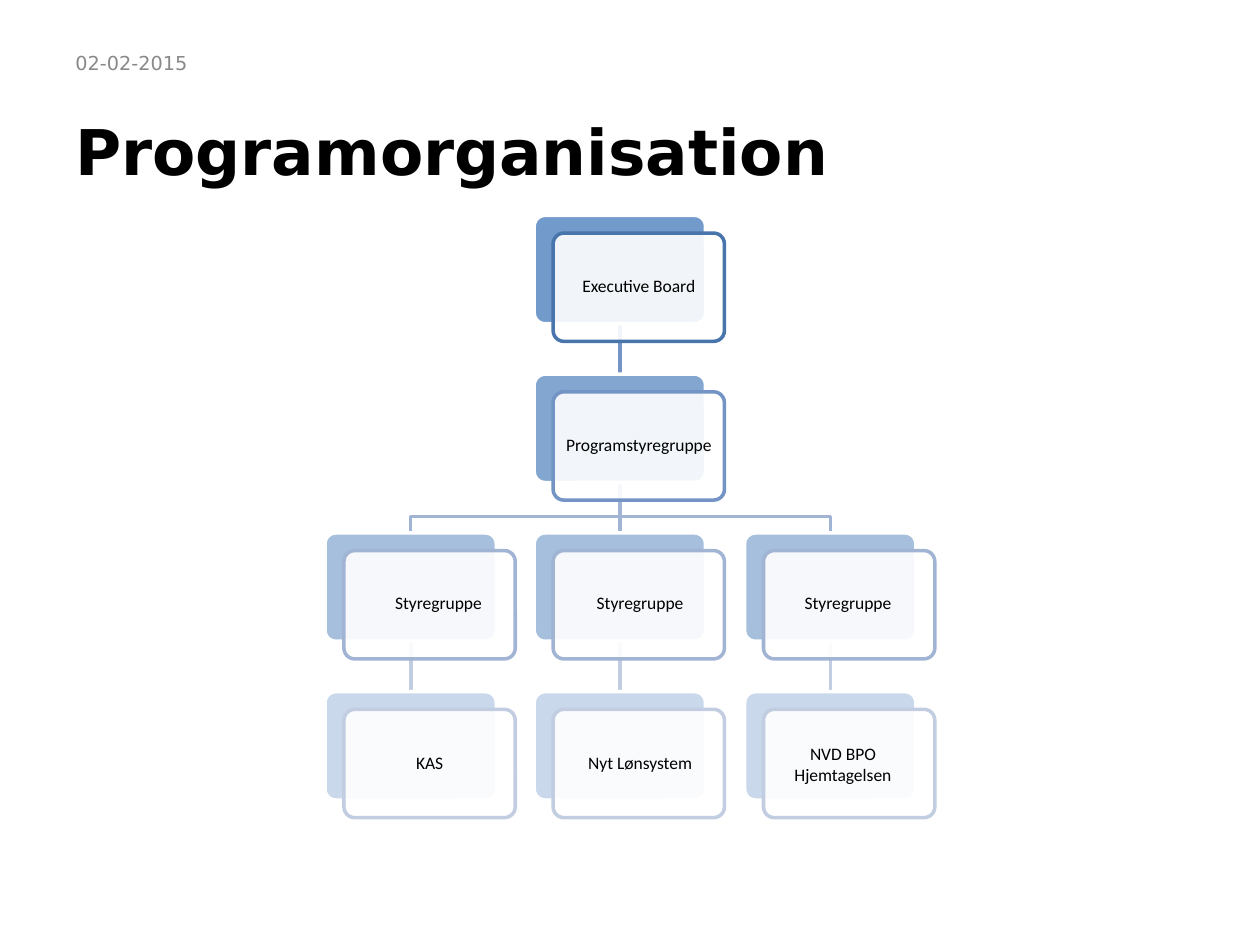
from dataclasses import dataclass

from lxml.etree import SubElement as Sub
from pptx import Presentation
from pptx.dml.color import RGBColor
from pptx.enum.shapes import MSO_CONNECTOR as Link, MSO_SHAPE as Kind
from pptx.enum.text import MSO_ANCHOR as Anchor, PP_ALIGN as Align
from pptx.oxml.ns import qn
from pptx.util import Inches, Pt

COLS = (2.58, 4.24, 5.91)
TOP, STEP = 1.71, 1.26
WIDE, HIGH = 1.36, 0.86
DX, DY = 0.15, 0.14  # shift of the front card
GAP, BEND = 0.4, 0.27  # link height, and where it turns


@dataclass
class Level:
    edge: str
    alpha: int
    cols: tuple[int, ...]


@dataclass
class Label:
    text: str
    x: float
    y: float
    w: float
    h: float
    size: float = 10
    font: str = "Calibri"
    color: str = "000000"
    bold: bool = False
    align: Align = Align.CENTER
    anchor: Anchor = Anchor.TOP
    pad: float | None = None
    lead: float | None = None


LEVELS = [
    Level("4875AC", 80, (1,)),
    Level("7394C5", 70, (1,)),
    Level("A1B4D4", 50, (0, 1, 2)),
    Level("C2CDE1", 30, (0, 1, 2)),
]


def row_top(row: int) -> float:
    return TOP + row * STEP


def inner(text: str, col: int, row: int) -> Label:
    """Label that fills the front card."""
    return Label(text, COLS[col] + DX, row_top(row) + DY, WIDE, HIGH,
                 anchor=Anchor.MIDDLE, pad=0.04, lead=0.9)


LABELS = [
    Label("Programorganisation", 0.5, 0.84, 8.75, 1, 36, "DejaVu Sans",
          bold=True, align=Align.LEFT),
    Label("02-02-2015", 0.5, 0.3, 2.33, 0.4, 11, "DejaVu Sans", "898989",
          align=Align.LEFT, anchor=Anchor.MIDDLE),
    inner("Executive Board", 1, 0),
    inner("Programstyregruppe", 1, 1),
    inner("KAS", 0, 3),
    Label("Nyt Lønsystem", 4.45, 5.92, 1.26, 0.27),
    Label("NVD BPO Hjemtagelsen", 6.02, 5.85, 1.34, 0.44),
    Label("Styregruppe", 2.83, 4.65, 1.3, 0.27),
    Label("Styregruppe", 4.45, 4.65, 1.26, 0.27),
    Label("Styregruppe", 6.1, 4.65, 1.26, 0.27),
]


def rgb(code: str) -> RGBColor:
    return RGBColor.from_string(code)


def stroke(item, color: str) -> None:
    item.line.color.rgb = rgb(color)
    item.line.width = Pt(2)


def add_link(slide, start: int, end: int, row: int, color: str) -> None:
    """Join the card above to the one at this row."""
    x1, x2 = (COLS[c] + WIDE / 2 for c in (start, end))
    y = row_top(row) - GAP
    if start == end:
        line = slide.shapes.add_connector(
            Link.STRAIGHT, Inches(x1), Inches(y), Inches(x2), Inches(y + GAP))
        Sub(line._element.spPr, qn("a:effectLst"))
    else:
        pen = slide.shapes.build_freeform(Inches(x1), Inches(y))
        turns = [(x1, y + BEND), (x2, y + BEND), (x2, y + GAP)]
        pen.add_line_segments([(Inches(a), Inches(b)) for a, b in turns],
                              close=False)
        line = pen.convert_to_shape()
        line.fill.background()
        line.shadow.inherit = False
    stroke(line, color)


def add_panel(slide, x: float, y: float, fill: str, alpha: int,
              edge: str) -> None:
    box = slide.shapes.add_shape(Kind.ROUNDED_RECTANGLE, Inches(x), Inches(y),
                                 Inches(WIDE), Inches(HIGH))
    box.adjustments[0] = 0.1
    box.shadow.inherit = False
    box.fill.solid()
    box.fill.fore_color.rgb = rgb(fill)
    tint = box._element.spPr.find(qn("a:solidFill"))[0]
    Sub(tint, qn("a:alpha")).set("val", str(alpha * 1000))
    stroke(box, edge)


def add_card(slide, col: int, row: int, level: Level) -> None:
    x, y = COLS[col], row_top(row)
    add_panel(slide, x, y, "4F81BD", level.alpha, "FFFFFF")
    add_panel(slide, x + DX, y + DY, "FFFFFF", 90, level.edge)


def add_label(slide, label: Label) -> None:
    box = slide.shapes.add_textbox(Inches(label.x), Inches(label.y),
                                   Inches(label.w), Inches(label.h))
    frame = box.text_frame
    frame.word_wrap = True
    frame.vertical_anchor = label.anchor
    if label.pad is not None:
        frame.margin_left = frame.margin_right = Inches(label.pad)
        frame.margin_top = frame.margin_bottom = Inches(label.pad)
    para = frame.paragraphs[0]
    para.alignment = label.align
    if label.lead:
        para.line_spacing = label.lead
    run = para.add_run()
    run.text = label.text
    run.font.name = label.font
    run.font.size = Pt(label.size)
    run.font.bold = label.bold
    run.font.color.rgb = rgb(label.color)


def main() -> None:
    deck = Presentation()
    deck.slide_width, deck.slide_height = Inches(10), Inches(7.5)
    slide = deck.slides.add_slide(deck.slide_layouts[6])

    # Links lie behind the cards; the third level fans out from the middle
    links = [("7394C5", 1), ("A1B4D4", 2), ("C2CDE1", 3)]
    for color, row in links:
        for col in LEVELS[row].cols:
            add_link(slide, 1 if row == 2 else col, col, row, color)

    # Cards
    for row, level in enumerate(LEVELS):
        for col in level.cols:
            add_card(slide, col, row, level)

    # Heading, date and card texts
    for label in LABELS:
        add_label(slide, label)

    deck.save("out.pptx")


if __name__ == "__main__":
    main()
